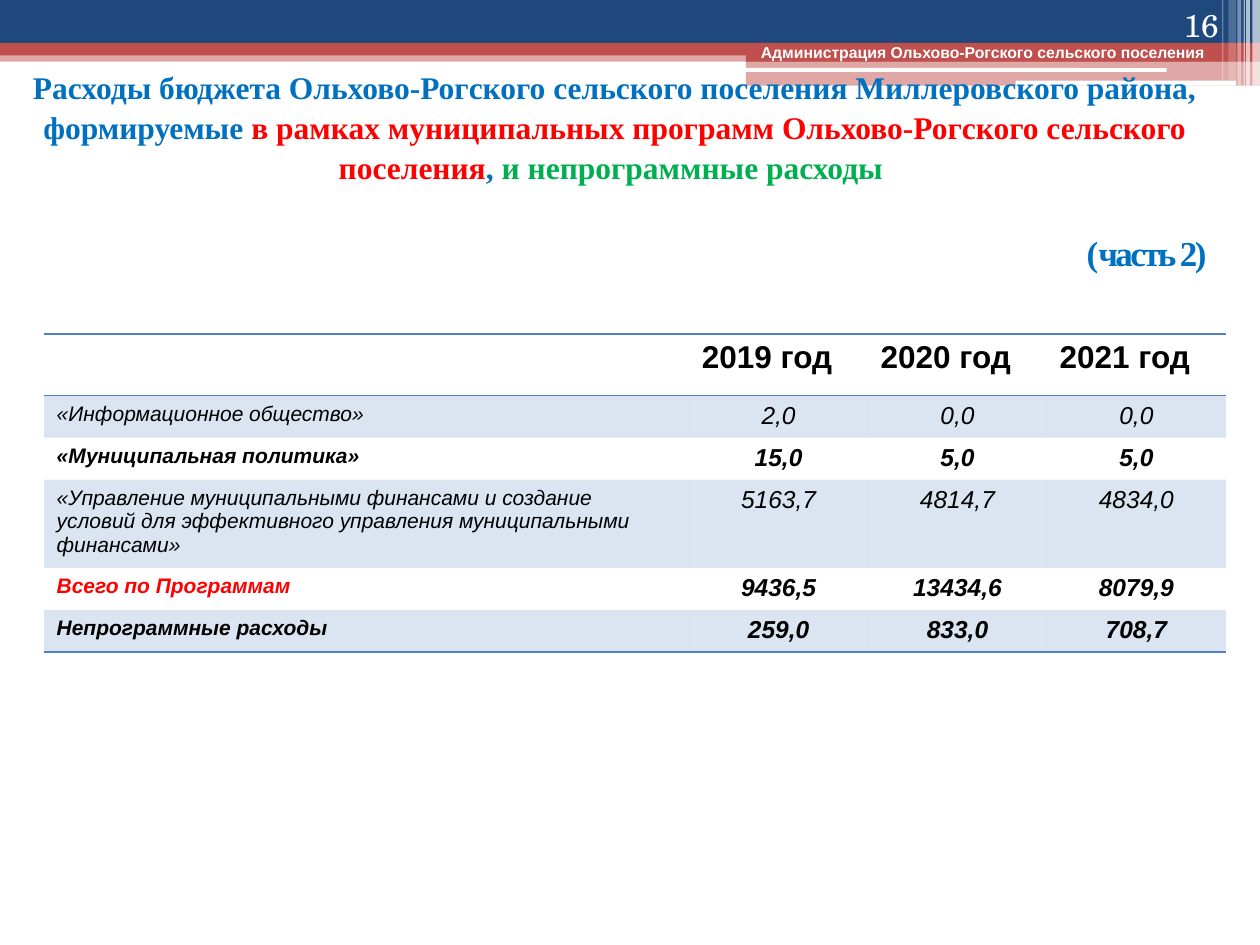
from dataclasses import dataclass

from lxml.etree import SubElement
from pptx import Presentation
from pptx.dml.color import RGBColor
from pptx.enum.shapes import MSO_SHAPE as Shape
from pptx.enum.text import MSO_ANCHOR as Anchor, MSO_AUTO_SIZE as AutoSize, PP_ALIGN as Align
from pptx.oxml import parse_xml
from pptx.oxml.ns import nsdecls, qn
from pptx.util import Inches, Pt


@dataclass(frozen=True)
class Theme:
    navy: str = "1F497D"
    brick: str = "C0504D"
    steel: str = "4F81BD"
    blue: str = "0070C0"
    red: str = "FF0000"
    green: str = "00B050"
    white: str = "FFFFFF"
    black: str = "000000"
    sans: str = "Arial"
    serif: str = "Times New Roman"
    number_font: str = "TeX Gyre Schola"
    title_size: float = 18
    part_size: float = 20
    header_size: float = 18
    value_size: float = 14
    label_size: float = 12
    owner_size: float = 9
    number_size: float = 18


def set_fill(fill, color, opacity=100):
    """Solid fill; opacity is a percentage."""
    fill.solid()
    fill.fore_color.rgb = RGBColor.from_string(color)
    if opacity < 100:
        color_node = fill._xPr.find(qn("a:solidFill"))[0]
        SubElement(color_node, qn("a:alpha"), val=str(opacity * 1000))


def add_text(paragraph, text, *, size, font, color, bold=False, italic=False, spacing=0):
    """Add formatted text; each newline becomes a line break of the same size."""
    for number, line in enumerate(text.split("\n")):
        if number:
            paragraph.add_line_break()
            SubElement(paragraph._p[-1], qn("a:rPr"), sz=str(int(size * 100)))
        if not line:
            continue
        run = paragraph.add_run()
        run.text = line
        run.font.size, run.font.name = Pt(size), font
        run.font.bold, run.font.italic = bold, italic
        run.font.color.rgb = RGBColor.from_string(color)
        if spacing:
            run.font._element.set("spc", str(int(spacing * 100)))


def add_borders(cell, color, **widths):
    """Draw cell borders, given as lnT and lnB widths in points."""
    for position, (side, width) in enumerate(widths.items()):
        cell._tc.get_or_add_tcPr().insert(position, parse_xml(
            f'<a:{side} {nsdecls("a")} w="{Pt(width)}"><a:solidFill>'
            f'<a:srgbClr val="{color}"/></a:solidFill></a:{side}>'))


class SlideBuilder:
    NO_TABLE_STYLE = "{2D5ABB26-0587-4C30-8999-92F81FD0307C}"

    def __init__(self, slide, theme):
        self.slide, self.theme = slide, theme

    def bar(self, left, top, width, height, color, opacity=100, kind=Shape.RECTANGLE):
        bar = self.slide.shapes.add_shape(
            kind, Inches(left), Inches(top), Inches(width), Inches(height))
        bar.shadow.inherit = False
        bar.line.fill.background()
        set_fill(bar.fill, color, opacity)

    def label(self, left, top, width, height, text, align=Align.LEFT, anchor=Anchor.TOP, **style):
        frame = self.slide.shapes.add_textbox(
            Inches(left), Inches(top), Inches(width), Inches(height)).text_frame
        frame.word_wrap, frame.vertical_anchor = True, anchor
        frame.paragraphs[0].alignment = align
        add_text(frame.paragraphs[0], text, **style)

    def title(self, left, top, width, height, parts, tab):
        title = self.slide.shapes.title
        title.left, title.top = Inches(left), Inches(top)
        title.width, title.height = Inches(width), Inches(height)
        self.slide.shapes._spTree.append(title._element)  # in front of the bars
        frame = title.text_frame
        frame.word_wrap, frame.auto_size = True, AutoSize.NONE
        frame.vertical_anchor = Anchor.MIDDLE
        paragraph = frame.paragraphs[0]
        paragraph.alignment, paragraph.line_spacing = Align.CENTER, 1.05
        tabs = SubElement(paragraph._p.get_or_add_pPr(), qn("a:tabLst"))
        SubElement(tabs, qn("a:tab"), pos=str(Inches(tab)), algn="l")
        for text, color, size, spacing in parts:
            add_text(paragraph, text, color=color, size=size, spacing=spacing,
                     font=self.theme.serif, bold=True)

    def table(self, left, top, column_widths, row_heights, years, expenses):
        theme = self.theme
        table = self.slide.shapes.add_table(
            len(row_heights), len(column_widths), Inches(left), Inches(top),
            Inches(sum(column_widths)), Inches(sum(row_heights))).table
        table.first_row = table.horz_banding = False
        table._tbl.tblPr.find(qn("a:tableStyleId")).text = self.NO_TABLE_STYLE
        for column, width in zip(table.columns, column_widths):
            column.width = Inches(width)
        for row, height in zip(table.rows, row_heights):
            row.height = Inches(height)

        for cell, year in zip(table.rows[0].cells, ["", *years]):
            cell.fill.background()
            add_borders(cell, theme.steel, lnT=1, lnB=1)
            add_text(cell.text_frame.paragraphs[0], year, size=theme.header_size,
                     font=theme.sans, color=theme.black, bold=True)

        for number, (name, values, bold, name_color) in enumerate(expenses, start=1):
            for column, text in enumerate([name, *values]):
                cell = table.cell(number, column)
                if number % 2:
                    set_fill(cell.fill, theme.steel, 20)
                else:
                    cell.fill.background()
                if number == len(expenses):
                    add_borders(cell, theme.steel, lnB=1)
                paragraph = cell.text_frame.paragraphs[0]
                paragraph.alignment = Align.CENTER if column else Align.LEFT
                add_text(paragraph, text, font=theme.sans, bold=bold, italic=True,
                         size=theme.value_size if column else theme.label_size,
                         color=theme.black if column else name_color)


def draw_header(builder):
    theme = builder.theme
    builder.bar(0, 0.4, 10, 0.09, theme.brick, 50)
    builder.bar(0, 0, 10, 0.34, theme.navy)
    builder.bar(0, 0.34, 10, 0.1, theme.brick)
    builder.bar(5.92, 0.39, 4.08, 0.1, theme.brick)
    builder.bar(5.92, 0.48, 4.08, 0.2, theme.brick, 50)
    builder.bar(5.91, 0.54, 3.35, 0.03, theme.white, kind=Shape.ROUNDED_RECTANGLE)
    builder.bar(8.06, 0.64, 1.75, 0.04, theme.white, kind=Shape.ROUNDED_RECTANGLE)
    stripes = [(9.94, 0.06, 0.68, 65), (9.89, 0.03, 0.68, 65), (9.87, 0.01, 0.68, 60),
               (9.82, 0.03, 0.68, 40), (9.75, 0.06, 0.64, 20), (9.7, 0.01, 0.64, 30)]
    for left, width, height, opacity in stripes:
        builder.bar(left, 0, width, height, theme.white, opacity)
    builder.label(5.94, 0.29, 3.78, 0.25, "Администрация Ольхово-Рогского сельского поселения",
                  size=theme.owner_size, font=theme.sans, color=theme.white, bold=True)


def main():
    theme = Theme()
    deck = Presentation()
    deck.slide_width, deck.slide_height = Inches(10), Inches(7.5)
    builder = SlideBuilder(deck.slides.add_slide(deck.slide_layouts[5]), theme)

    draw_header(builder)
    builder.title(0, 0.68, 9.76, 1.34, [
        ("Расходы бюджета Ольхово-Рогского сельского поселения Миллеровского района, "
         "формируемые ", theme.blue, theme.title_size, 0),
        ("в рамках муниципальных программ Ольхово-Рогского сельского поселения",
         theme.red, theme.title_size, 0),
        (", ", theme.blue, theme.title_size, 0),
        ("и непрограммные расходы \n", theme.green, theme.title_size, 0),
        ("\t\n", theme.green, theme.part_size, 0),
        ("\t(", theme.blue, theme.part_size, 0),
        ("часть 2)", theme.blue, theme.part_size, -1.5),
    ], tab=8.44)
    builder.label(8.94, 0, 0.83, 0.4, "16", align=Align.RIGHT, anchor=Anchor.BOTTOM,
                  size=theme.number_size, font=theme.number_font, color=theme.white)

    expenses = [
        ("«Информационное общество»", ["2,0", "0,0", "0,0"], False, theme.black),
        ("«Муниципальная политика»", ["15,0", "5,0", "5,0"], True, theme.black),
        ("«Управление муниципальными финансами и создание условий для эффективного "
         "управления муниципальными финансами»",
         ["5163,7", "4814,7", "4834,0"], False, theme.black),
        ("Всего по Программам", ["9436,5", "13434,6", "8079,9"], True, theme.red),
        ("Непрограммные расходы", ["259,0", "833,0", "708,7"], True, theme.black),
    ]
    builder.table(0.35, 2.65, [5.12] + [1.42] * 3, [0.49, 0.32, 0.32, 0.66, 0.32, 0.32],
                  ["2019 год", "2020 год", "2021 год"], expenses)
    deck.save("out.pptx")


if __name__ == "__main__":
    main()
